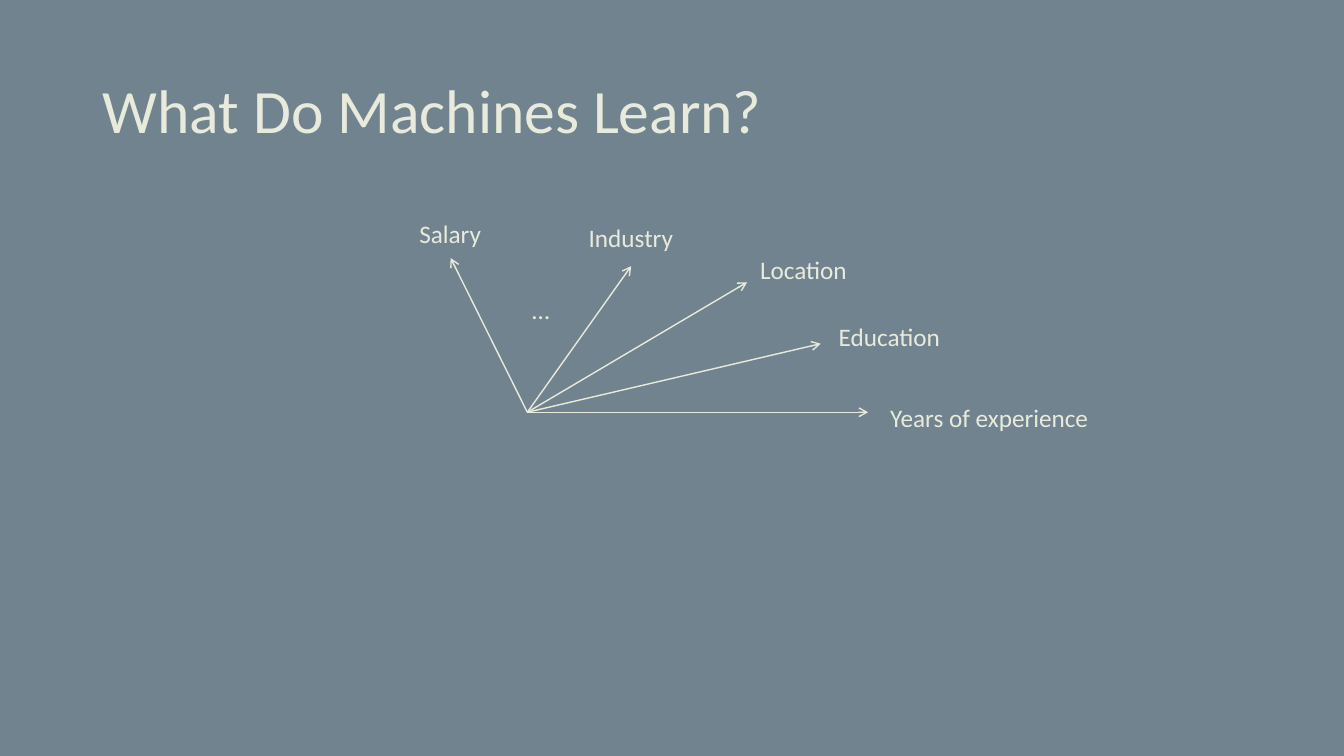
from dataclasses import dataclass

from lxml.etree import SubElement
from pptx import Presentation
from pptx.dml.color import RGBColor
from pptx.enum.shapes import MSO_CONNECTOR
from pptx.enum.text import MSO_ANCHOR, MSO_AUTO_SIZE
from pptx.oxml.ns import qn
from pptx.util import Inches, Pt


@dataclass(frozen=True)
class Theme:
    background: RGBColor = RGBColor(0x71, 0x83, 0x8F)
    ink: RGBColor = RGBColor(0xE8, 0xEA, 0xDC)
    font: str = "Calibri"
    title_size: Pt = Pt(44)
    label_size: Pt = Pt(18)
    line_width: Pt = Pt(1)


THEME = Theme()
ORIGIN = (5.23, 4.09)
LABEL_HEIGHT = 0.4

FEATURES = [
    ("Years of experience", (8.61, 4.09), (8.73, 3.94), 2.19),
    ("Education", (8.14, 3.41), (8.22, 3.14), 1.22),
    ("Location", (7.41, 2.8), (7.44, 2.47), 1.07),
    ("Industry", (6.26, 2.64), (5.74, 2.16), 1.05),
    ("Salary", (4.47, 2.56), (4.06, 2.12), 0.82),
]


def set_background(slide):
    fill = slide.background.fill
    fill.solid()
    fill.fore_color.rgb = THEME.background


def add_text(slide, text, position, width, height, size):
    shape = slide.shapes.add_textbox(*map(Inches, (*position, width, height)))
    paragraph = shape.text_frame.paragraphs[0]
    paragraph.text = text
    paragraph.font.name = THEME.font
    paragraph.font.size = size
    paragraph.font.color.rgb = THEME.ink
    return shape.text_frame


def add_title(slide, text):
    frame = add_text(slide, text, (0.92, 0.4), 11.5, 1.45, THEME.title_size)
    frame.word_wrap = True
    frame.vertical_anchor = MSO_ANCHOR.MIDDLE
    frame.paragraphs[0].line_spacing = 0.9


def add_label(slide, text, position, width):
    frame = add_text(slide, text, position, width, LABEL_HEIGHT, THEME.label_size)
    frame.word_wrap = False
    frame.auto_size = MSO_AUTO_SIZE.SHAPE_TO_FIT_TEXT


def add_arrow(slide, start, end):
    arrow = slide.shapes.add_connector(
        MSO_CONNECTOR.STRAIGHT, *map(Inches, (*start, *end))
    )
    arrow.line.color.rgb = THEME.ink
    arrow.line.width = THEME.line_width
    SubElement(arrow.line._get_or_add_ln(), qn("a:tailEnd"), type="arrow")
    SubElement(arrow._element.spPr, qn("a:effectLst"))


def main():
    presentation = Presentation()
    presentation.slide_width = Inches(13.33)
    presentation.slide_height = Inches(7.5)
    slide = presentation.slides.add_slide(presentation.slide_layouts[6])
    set_background(slide)
    add_title(slide, "What Do Machines Learn?")
    for name, tip, position, width in FEATURES:
        add_arrow(slide, ORIGIN, tip)
        add_label(slide, name, position, width)
    add_label(slide, "…", (5.18, 2.87), 0.38)
    presentation.save("out.pptx")


if __name__ == "__main__":
    main()
